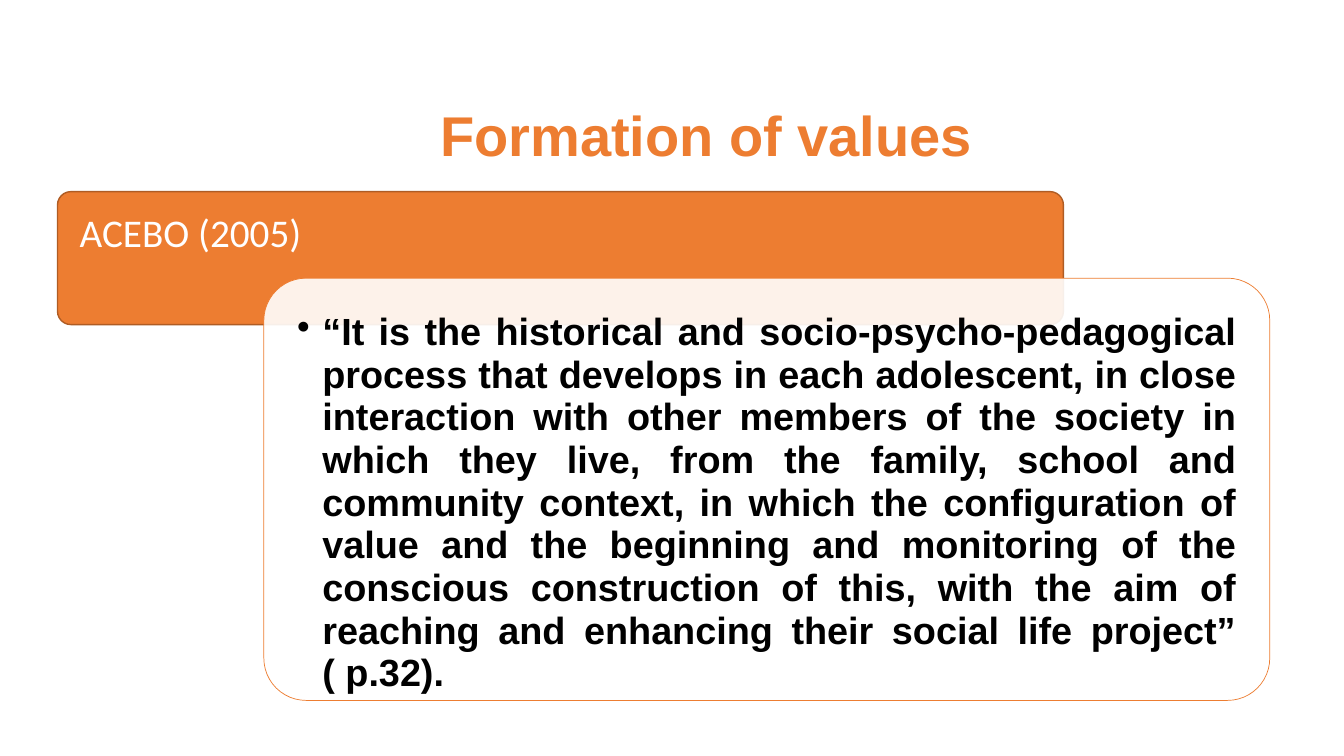
from lxml import etree
from pptx import Presentation
from pptx.dml.color import RGBColor
from pptx.enum import shapes, text
from pptx.oxml import ns
from pptx.util import Cm, Pt

# Content
HEADING = "Formation of values"
AUTHOR = "ACEBO (2005)"
QUOTE = (
    "“It is the historical and socio-psycho-pedagogical process that develops "
    "in each adolescent, in close interaction with other members of the society "
    "in which they live, from the family, school and community context, in which "
    "the configuration of value and the beginning and monitoring of the conscious "
    "construction of this, with the aim of reaching and enhancing their social "
    "life project” ( p.32)."
)

# Colours
ORANGE = RGBColor(0xED, 0x7D, 0x31)
DARK_ORANGE = RGBColor(0xAF, 0x5C, 0x24)
WHITE = RGBColor(0xFF, 0xFF, 0xFF)
BLACK = RGBColor(0, 0, 0)

# Layout in cm: left, top, width, height
HEADING_BOX = (5.41, 1.7, 24.77, 3.56)
BANNER = (1.45, 4.83, 25.35, 3.35)
CARD = (6.65, 7.01, 25.35, 10.64)
CARD_MARGIN = 0.31
BULLET_INDENT = 0.635

prs = Presentation()
prs.slide_width, prs.slide_height = Cm(33.87), Cm(19.05)
slide = prs.slides.add_slide(prs.slide_layouts[6])


def add_panel(box, fill, line, line_width):
    panel = slide.shapes.add_shape(
        shapes.MSO_SHAPE.ROUNDED_RECTANGLE, *map(Cm, box))
    panel.adjustments[0] = 0.1
    panel.shadow.inherit = False
    panel.fill.solid()
    panel.fill.fore_color.rgb = fill
    panel.line.color.rgb = line
    panel.line.width = Pt(line_width)
    return panel


def add_text(box, words, font, size, color, bold, align, insets,
             anchor=text.MSO_ANCHOR.TOP, spacing=0.9):
    frame = slide.shapes.add_textbox(*map(Cm, box)).text_frame
    frame.word_wrap = True
    frame.vertical_anchor = anchor
    (frame.margin_left, frame.margin_top,
     frame.margin_right, frame.margin_bottom) = map(Cm, insets)
    paragraph = frame.paragraphs[0]
    paragraph.alignment = align
    paragraph.line_spacing = spacing
    run = paragraph.add_run()
    run.text = words
    run.font.name, run.font.size, run.font.bold = font, Pt(size), bold
    run.font.color.rgb = color
    return paragraph


# Heading
add_text(HEADING_BOX, HEADING, "Arial", 40, ORANGE, True, text.PP_ALIGN.CENTER,
         (0.25, 0.13, 0.25, 0.13), text.MSO_ANCHOR.MIDDLE)

# Author banner
add_panel(BANNER, ORANGE, DARK_ORANGE, 1)
left, top, width, height = BANNER
add_text((left, top, width, height * 2 / 3), AUTHOR, "Calibri", 28, WHITE, False,
         text.PP_ALIGN.LEFT, (0.56, 0.56, 0.56, 0.3))

# Quote card, slightly see-through over the banner
card = add_panel(CARD, WHITE, ORANGE, 0.5)
card_color = card.fill._xPr.find(ns.qn("a:solidFill"))[0]
etree.SubElement(card_color, ns.qn("a:alpha")).set("val", "90000")

left, top, width, height = CARD
quote_box = (left + CARD_MARGIN, top + CARD_MARGIN,
             width - 2 * CARD_MARGIN, height - 2 * CARD_MARGIN)
quote = add_text(quote_box, QUOTE, "Arial", 27, BLACK, True,
                 text.PP_ALIGN.JUSTIFY, (0.53,) * 4, spacing=0.94)

# Bullet with hanging indent
quote_format = quote._p.get_or_add_pPr()
quote_format.set("marL", str(Cm(BULLET_INDENT)))
quote_format.set("indent", str(-Cm(BULLET_INDENT)))
etree.SubElement(quote_format, ns.qn("a:buChar")).set("char", "•")

prs.save("out.pptx")
